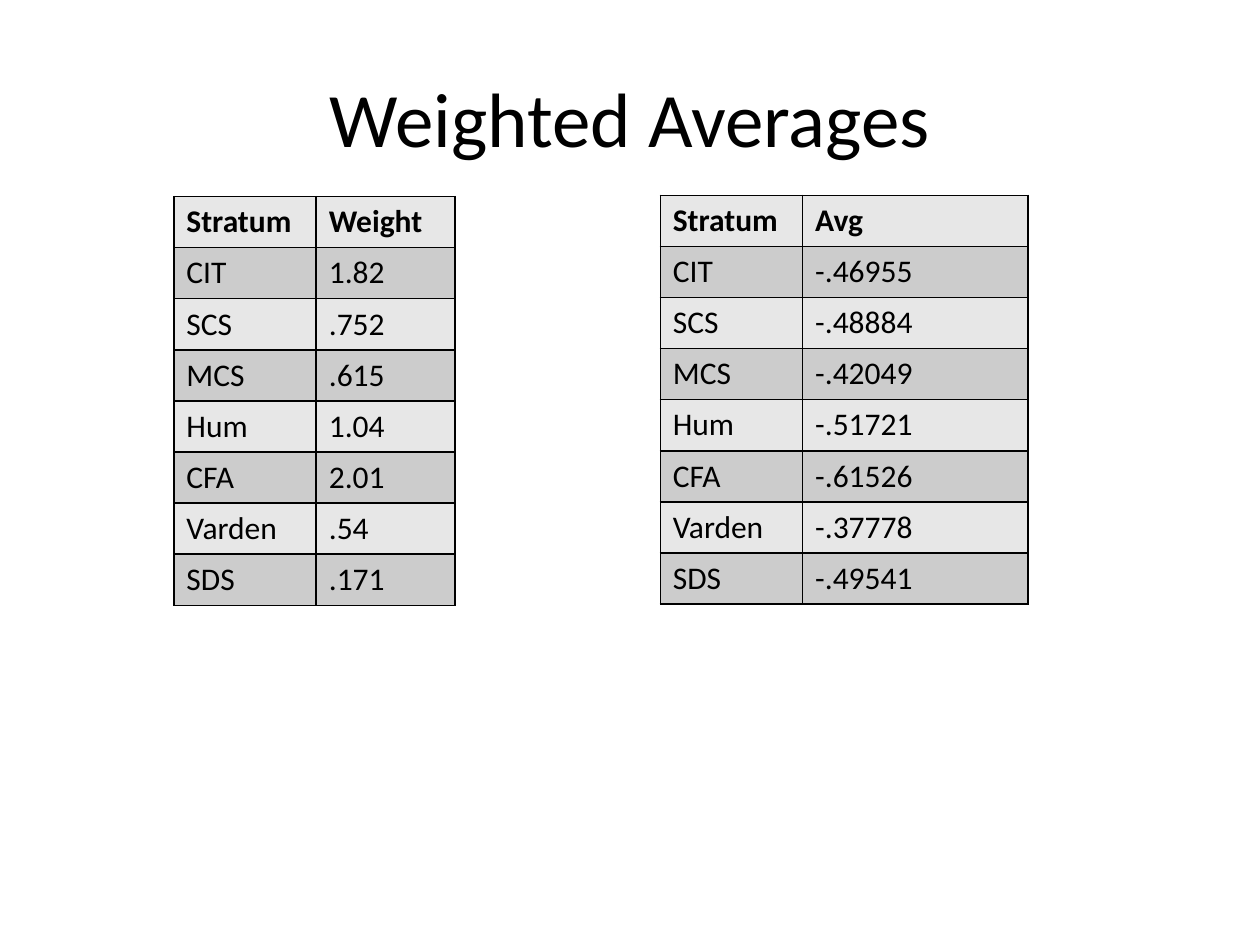
from lxml.etree import SubElement
from pptx import Presentation
from pptx.dml.color import RGBColor
from pptx.enum.text import MSO_ANCHOR as Anchor, PP_ALIGN as Align
from pptx.oxml.ns import qn
from pptx.util import Inches, Pt

BLACK = "000000"
BAND_FILLS = ["E7E7E7", "CCCCCC"]
STRATA = ["CIT", "SCS", "MCS", "Hum", "CFA", "Varden", "SDS"]
WEIGHTS = ["1.82", ".752", ".615", "1.04", "2.01", ".54", ".171"]
AVERAGES = ["-.46955", "-.48884", "-.42049", "-.51721", "-.61526", "-.37778", "-.49541"]


def write_text(frame, text, size=18, bold=False, color=BLACK, align=Align.LEFT):
    para = frame.paragraphs[0]
    para.alignment = align
    span = para.add_run()
    span.text = text
    span.font.name = "Calibri"
    span.font.size = Pt(size)
    span.font.bold = bold
    span.font.color.rgb = RGBColor.from_string(color)


def add_borders(cell, color=BLACK, width=1):
    """Draw all four sides; the lines must precede the fill in the cell's XML."""
    properties = cell._tc.get_or_add_tcPr()
    for side in ("a:lnL", "a:lnR", "a:lnT", "a:lnB"):
        line = SubElement(properties, qn(side), w=str(Pt(width)))
        fill = SubElement(line, qn("a:solidFill"))
        SubElement(fill, qn("a:srgbClr"), val=color)


deck = Presentation()
deck.slide_width, deck.slide_height = Inches(10), Inches(7.5)
page = deck.slides.add_slide(deck.slide_layouts[5])

title = page.shapes.title
title.left, title.top = Inches(0.5), Inches(0.3)
title.width, title.height = Inches(9), Inches(1.25)
title.text_frame.vertical_anchor = Anchor.MIDDLE
write_text(title.text_frame, "Weighted Averages", size=44, align=Align.CENTER)

# Left, top, column widths, value heading, values
tables = [
    (1.38, 1.56, [1.13, 1.1], "Weight", WEIGHTS),
    (5.24, 1.55, [1.13, 1.79], "Avg", AVERAGES),
]
for left, top, widths, heading, values in tables:
    rows = [("Stratum", heading), *zip(STRATA, values)]
    table = page.shapes.add_table(
        len(rows), len(widths), Inches(left), Inches(top), Inches(sum(widths)), Inches(3.24)
    ).table
    for column, width in zip(table.columns, widths):
        column.width = Inches(width)
    for row_index, row in enumerate(rows):
        for column_index, text in enumerate(row):
            cell = table.cell(row_index, column_index)
            add_borders(cell)
            cell.fill.solid()
            cell.fill.fore_color.rgb = RGBColor.from_string(BAND_FILLS[row_index % 2])
            write_text(cell.text_frame, text, bold=row_index == 0)

deck.save("out.pptx")
